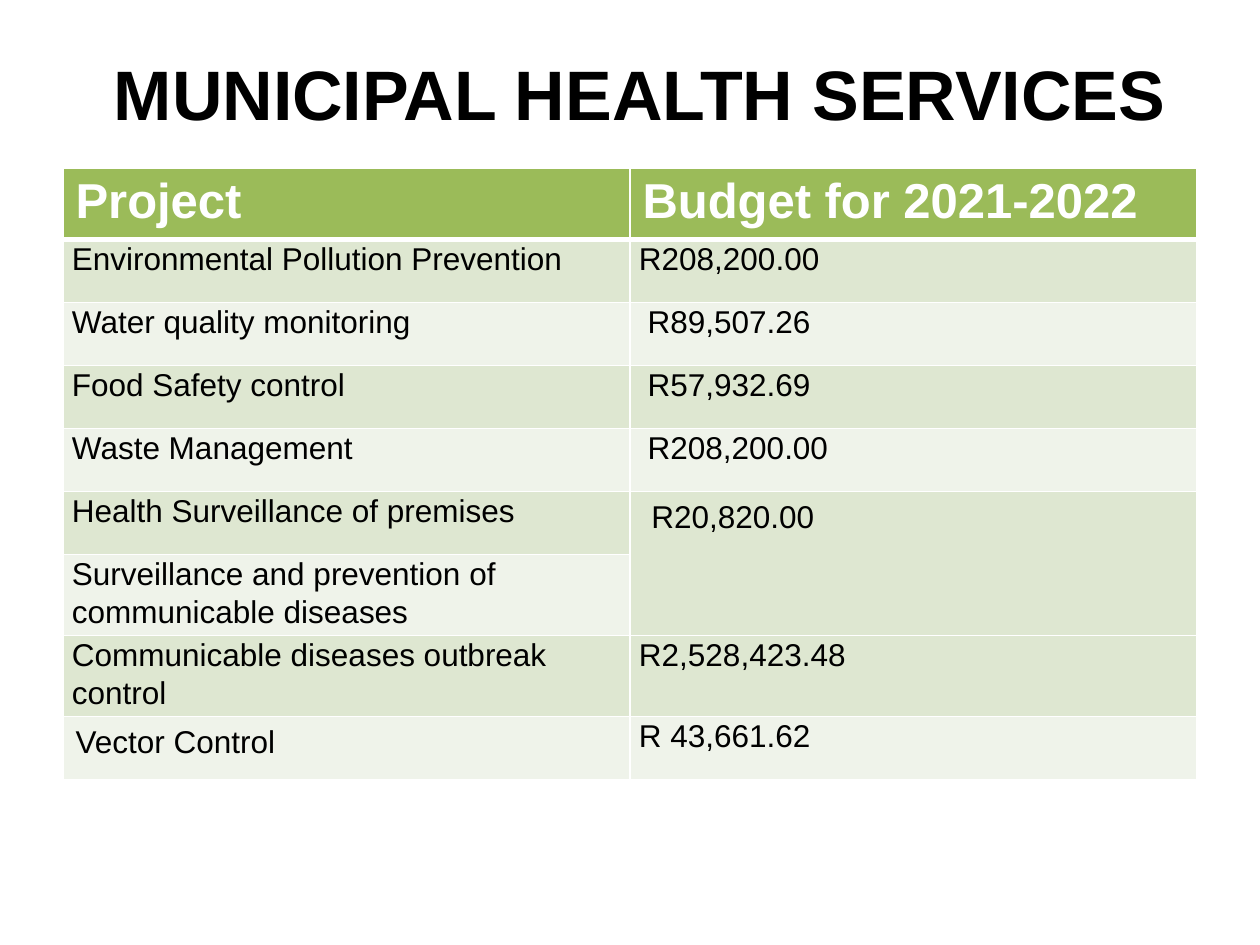
from dataclasses import dataclass

from lxml import etree
from pptx import Presentation
from pptx import util as u
from pptx.dml.color import RGBColor
from pptx.enum import text
from pptx.oxml import ns

SCALE = 914400 / 126
FONT = "Arial"
WHITE = RGBColor(0xFF, 0xFF, 0xFF)
BLACK = RGBColor(0, 0, 0)
GREEN = RGBColor(0x9B, 0xBB, 0x59)
BANDS = (RGBColor(0xDE, 0xE7, 0xD1), RGBColor(0xEF, 0xF3, 0xEA))


@dataclass(frozen=True)
class Item:
    project: str
    budget: str = ""
    just: bool = False
    roomy: tuple[bool, bool] = (False, False)  # columns with default margins


ITEMS = (
    Item("Environmental Pollution Prevention", "R208,200.00"),
    Item("Water quality monitoring", " R89,507.26", True),
    Item("Food Safety control", " R57,932.69", True),
    Item("Waste Management", " R208,200.00", True),
    Item("Health Surveillance of premises", " R20,820.00", True, (False, True)),
    Item("Surveillance and prevention of communicable diseases"),
    Item("Communicable diseases outbreak control", "R2,528,423.48"),
    Item("Vector Control", "R 43,661.62", roomy=(True, False)),
)
SHARED = 5  # first of the two rows that share one budget


def px(n: int) -> u.Emu:
    return u.Emu(round(n * SCALE))


def style(para, size: int, color: RGBColor, bold: bool) -> None:
    font = para.font
    font.name, font.size, font.bold = FONT, u.Pt(size), bold
    font.color.rgb = color


def edge(cell, top: int = 1, bottom: int = 1) -> None:
    """Draw white cell borders, with widths in points."""
    props = cell._tc.get_or_add_tcPr()
    widths = {"lnL": 1, "lnR": 1, "lnT": top, "lnB": bottom}
    for i, (tag, width) in enumerate(widths.items()):
        line = etree.Element(ns.qn(f"a:{tag}"), w=str(u.Pt(width)))
        fill = etree.SubElement(line, ns.qn("a:solidFill"))
        etree.SubElement(fill, ns.qn("a:srgbClr"), val=str(WHITE))
        props.insert(i, line)


def paint(cell, color: RGBColor, top: int = 1, bottom: int = 1) -> None:
    cell.fill.solid()
    cell.fill.fore_color.rgb = color
    edge(cell, top, bottom)


def title(slide) -> None:
    box = slide.shapes.add_textbox(px(63), px(38), px(1134), px(110))
    frame = box.text_frame
    frame.word_wrap = True
    frame.vertical_anchor = text.MSO_ANCHOR.MIDDLE
    para = frame.paragraphs[0]
    para.text = " MUNICIPAL HEALTH SERVICES"
    para.alignment = text.PP_ALIGN.CENTER
    style(para, 40, BLACK, True)


def head(table) -> None:
    for cell, label in zip(table.rows[0].cells, ("Project", "Budget for 2021-2022")):
        cell.text = label
        style(cell.text_frame.paragraphs[0], 28, WHITE, True)
        paint(cell, GREEN, bottom=3)


def fill_row(table, row: int, item: Item) -> None:
    for col, label in enumerate((item.project, item.budget)):
        cell = table.cell(row, col)
        paint(cell, BANDS[(row - 1) % 2], top=3 if row == 1 else 1)
        if not label:
            continue
        cell.text = label
        if not item.roomy[col]:
            cell.margin_left = cell.margin_right = px(9)
            cell.margin_top = cell.margin_bottom = 0
        para = cell.text_frame.paragraphs[0]
        para.line_spacing = 1.07
        if col and item.just:
            para.alignment = text.PP_ALIGN.JUSTIFY
        style(para, 18, BLACK, False)


def budget(slide) -> None:
    count = len(ITEMS) + 1
    frame = slide.shapes.add_table(count, 2, px(63), px(168), px(1134), px(63 * count))
    table = frame.table
    for row in table.rows:
        row.height = px(63)
    head(table)
    for row, item in enumerate(ITEMS, 1):
        fill_row(table, row, item)
    table.cell(SHARED, 1).merge(table.cell(SHARED + 1, 1))


def main() -> None:
    deck = Presentation()
    deck.slide_width, deck.slide_height = px(1260), px(945)
    slide = deck.slides.add_slide(deck.slide_layouts[6])
    title(slide)
    budget(slide)
    deck.save("out.pptx")


if __name__ == "__main__":
    main()
